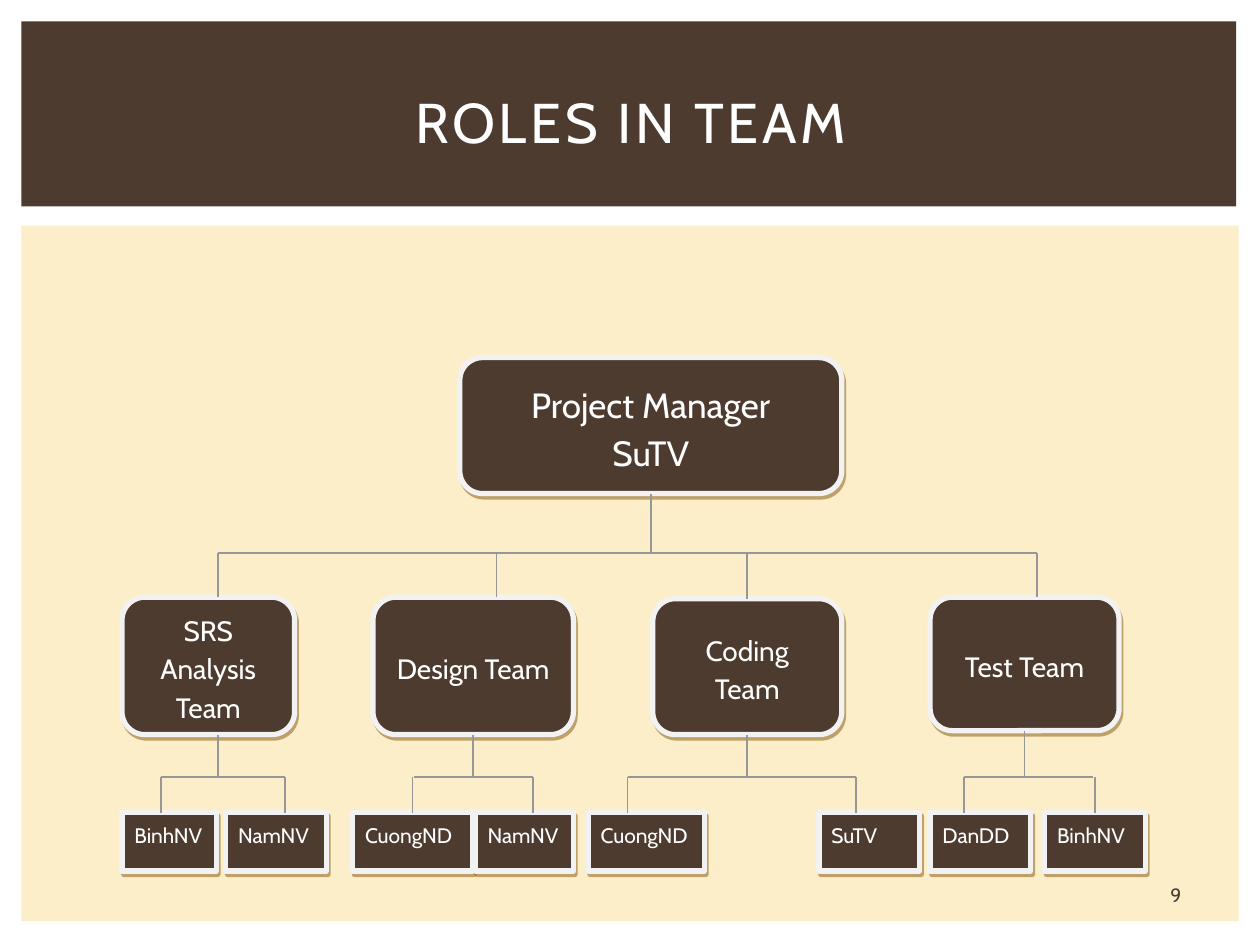
from collections import namedtuple

from lxml.etree import SubElement
from pptx import Presentation
from pptx.dml.color import RGBColor
from pptx.enum.shapes import MSO_CONNECTOR as Link, MSO_SHAPE as Preset
from pptx.enum.text import MSO_ANCHOR as Anchor, PP_ALIGN as Align
from pptx.oxml.ns import qn
from pptx.util import Cm, Pt

BROWN = RGBColor(0x4E, 0x3B, 0x30)
CREAM = RGBColor(0xFB, 0xEE, 0xC9)
WHITE = RGBColor(0xFF, 0xFF, 0xFF)
FRAME = RGBColor(0xF2, 0xF2, 0xF2)
GREY = RGBColor(0x97, 0x97, 0x97)
SHADOW = RGBColor(0x85, 0x54, 0x0A)

# Paragraph and font formats
TITLE_TEXT = ({"alignment": Align.CENTER}, {"name": "Cabin", "size": Pt(32)})
MANAGER_TEXT = ({"alignment": Align.CENTER, "line_spacing": 1.15},
                {"name": "Cabin", "size": Pt(20)})
TEAM_TEXT = ({"alignment": Align.CENTER, "line_spacing": 1.15, "space_after": Pt(10)},
             {"name": "Cabin", "size": Pt(16)})
MEMBER_TEXT = ({"alignment": Align.LEFT, "line_spacing": 1.15, "space_after": Pt(10)},
               {"name": "Cabin", "size": Pt(12)})
NUMBER_TEXT = ({"alignment": Align.CENTER}, {"name": "Cabin", "size": Pt(11)})

# Chart data in cm: drop is the x of the line above a box, stem of the one below
Team = namedtuple("Team", "name box drop stem members")
Member = namedtuple("Member", "name left width drop")

MANAGER_BOX = (9.27, 7.21, 7.7, 2.74)
TEAMS = [
    Team("SRS Analysis Team", (2.46, 12.04, 3.48, 2.77), 4.39, 4.39,
         [Member("BinhNV", 2.46, 1.9, 3.25), Member("NamNV", 4.55, 2.03, 5.74)]),
    Team("Design Team", (7.52, 12.04, 4.04, 2.77), 10.01, 9.56,
         [Member("CuongND", 7.11, 2.41, 8.34), Member("NamNV", 9.58, 1.98, 10.74)]),
    Team("Coding Team", (13.16, 12.07, 3.81, 2.74), 15.06, 15.06,
         [Member("CuongND", 11.86, 2.34, 12.65), Member("SuTV", 16.51, 2.03, 17.25)]),
    Team("Test Team", (18.75, 12.04, 3.81, 2.69), 20.9, 20.64,
         [Member("DanDD", 18.75, 2.03, 19.43), Member("BinhNV", 21.06, 2.03, 22.03)]),
]
TEAM_RAIL, MEMBER_RAIL = 11.15, 15.67
MEMBER_TOP, MEMBER_HEIGHT = 16.38, 1.18
TOP, BOTTOM = 0, 2  # connection sites
NEAR = Cm(0.1)      # a line this close to a side's middle is joined there


def set_all(target, values):
    for name, value in values.items():
        setattr(target, name, value)


def write(frame, lines, style, color, anchor=Anchor.MIDDLE):
    paragraph_format, font_format = style
    set_all(frame, {"word_wrap": True, "vertical_anchor": anchor})
    for index, line in enumerate(lines):
        paragraph = frame.paragraphs[0] if index == 0 else frame.add_paragraph()
        set_all(paragraph, paragraph_format)
        run = paragraph.add_run()
        run.text = line
        set_all(run.font, font_format)
        run.font.color.rgb = color


def add_band(slide, box, color):
    band = slide.shapes.add_shape(Preset.RECTANGLE, *map(Cm, box))
    band.shadow.inherit = False
    band.fill.solid()
    band.fill.fore_color.rgb = color
    band.line.fill.background()


def add_title(slide, text, box):
    title = slide.shapes.title
    set_all(title, dict(zip(("left", "top", "width", "height"), map(Cm, box))))
    write(title.text_frame, [text], TITLE_TEXT, WHITE)
    for properties in title.element.iter(qn("a:rPr")):
        properties.set("spc", "200")
    title.element.getparent().append(title.element)  # in front of the bands


def add_shadow(shape):
    shape.shadow.inherit = False
    effects = shape.element.spPr.find(qn("a:effectLst"))
    outer = SubElement(effects, qn("a:outerShdw"), blurRad="0", dist="27940",
                       dir="3780000", algn="ctr", rotWithShape="0")
    color = SubElement(outer, qn("a:srgbClr"), val=str(SHADOW))
    SubElement(color, qn("a:alpha"), val="50000")


def add_box(slide, preset, box, lines, style, anchor=Anchor.MIDDLE):
    role = slide.shapes.add_shape(preset, *map(Cm, box))
    role.fill.solid()
    role.fill.fore_color.rgb = BROWN
    role.line.color.rgb = FRAME
    role.line.width = Pt(3)
    add_shadow(role)
    write(role.text_frame, lines, style, WHITE, anchor)
    return role


def add_line(slide, x1, y1, x2, y2):
    line = slide.shapes.add_connector(Link.STRAIGHT, x1, y1, x2, y2)
    line.line.color.rgb = GREY
    line.line.width = Pt(1)
    SubElement(line.element.spPr, qn("a:effectLst"))
    return line


def add_stem(slide, role, side, x, rail):
    """Vertical line from a rail to the top or bottom of a box."""
    middle = role.left + role.width // 2
    joined = abs(middle - Cm(x)) < NEAR
    stem_x = middle if joined else Cm(x)
    edge = role.top if side == TOP else role.top + role.height
    stem = add_line(slide, stem_x, Cm(rail), stem_x, edge)
    if joined:
        stem.end_connect(role, side)


def add_rail(slide, children, y):
    add_line(slide, Cm(children[0].drop), Cm(y), Cm(children[-1].drop), Cm(y))


def add_team(slide, team):
    team_box = add_box(slide, Preset.ROUNDED_RECTANGLE, team.box, [team.name], TEAM_TEXT)
    add_stem(slide, team_box, TOP, team.drop, TEAM_RAIL)
    add_stem(slide, team_box, BOTTOM, team.stem, MEMBER_RAIL)
    add_rail(slide, team.members, MEMBER_RAIL)
    for member in team.members:
        box = (member.left, MEMBER_TOP, member.width, MEMBER_HEIGHT)
        member_box = add_box(slide, Preset.RECTANGLE, box, [member.name],
                             MEMBER_TEXT, Anchor.TOP)
        add_stem(slide, member_box, TOP, member.drop, MEMBER_RAIL)


def main():
    deck = Presentation()
    deck.slide_width, deck.slide_height = Cm(25.4), Cm(19.05)
    slide = deck.slides.add_slide(deck.slide_layouts[5])

    # Background bands and title
    add_band(slide, (0.43, 4.55, 24.54, 14.02), CREAM)
    add_band(slide, (0.43, 0.43, 24.49, 3.73), BROWN)
    add_title(slide, "ROLES IN TEAM", (1.07, 0.99, 23.29, 2.92))

    # Manager, teams and their members
    manager = add_box(slide, Preset.ROUNDED_RECTANGLE, MANAGER_BOX,
                      ["Project Manager", "SuTV"], MANAGER_TEXT)
    add_stem(slide, manager, BOTTOM, 13.12, TEAM_RAIL)
    add_rail(slide, TEAMS, TEAM_RAIL)
    for team in TEAMS:
        add_team(slide, team)

    # Slide number
    number = slide.shapes.add_textbox(Cm(22.89), Cm(17.65), Cm(1.63), Cm(0.76))
    write(number.text_frame, ["9"], NUMBER_TEXT, BROWN)

    deck.save("out.pptx")


if __name__ == "__main__":
    main()
